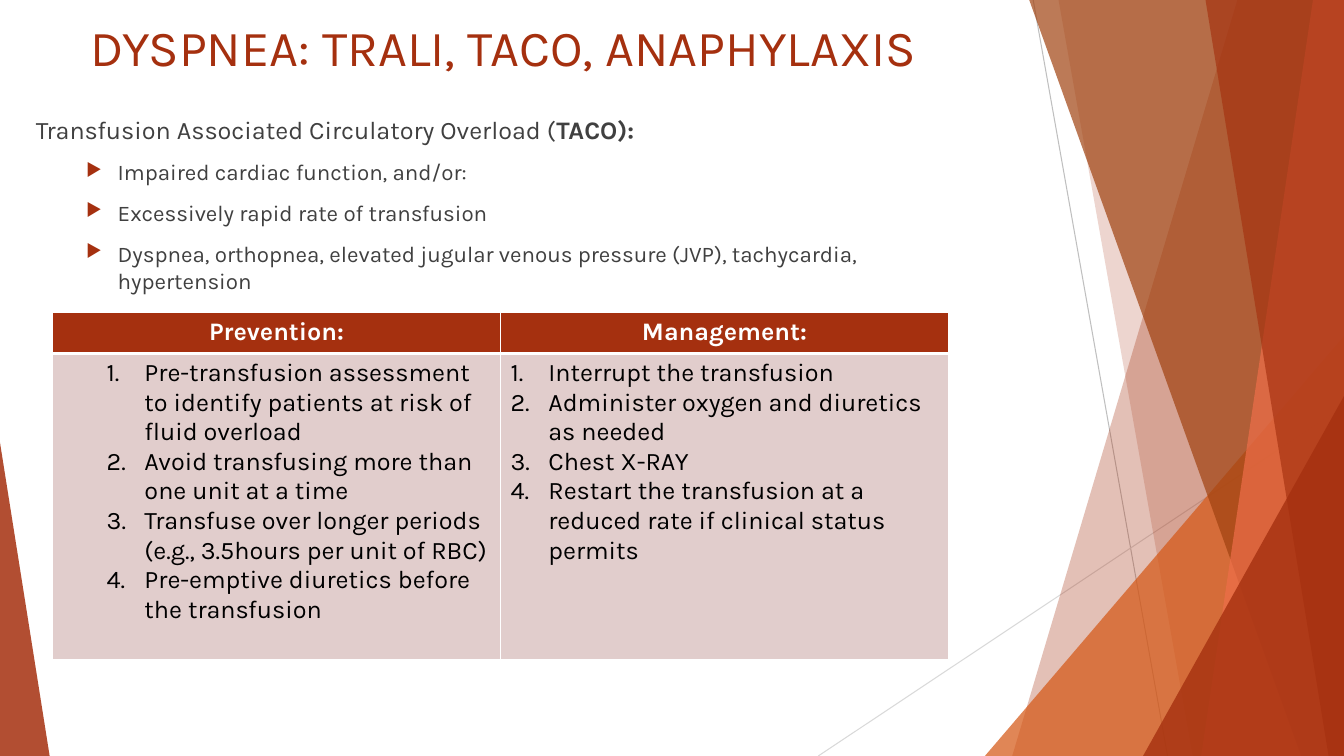
from lxml import etree
from pptx import Presentation
from pptx.dml.color import RGBColor
from pptx.enum.shapes import MSO_CONNECTOR, MSO_SHAPE
from pptx.enum.text import MSO_ANCHOR, PP_ALIGN
from pptx.oxml.ns import qn
from pptx.util import Pt

STRAIGHT = MSO_CONNECTOR.STRAIGHT
TRIANGLE = MSO_SHAPE.ISOSCELES_TRIANGLE
TOP, CENTER = MSO_ANCHOR.TOP, PP_ALIGN.CENTER

W, H = 960, 540
FONT = "Karla"
RUST, GREY, WHITE, BLACK, PINK = "A5300F", "404040", "FFFFFF", "000000", "E1CDCC"

EFFECTS = [
    "Impaired cardiac function, and/or:",
    "Excessively rapid rate of transfusion",
    "Dyspnea, orthopnea, elevated jugular venous pressure (JVP), tachycardia, hypertension",
]
# Header, left indent of the numbered text, steps
COLUMNS = [
    ("Prevention:", 58.5, [
        "Pre-transfusion assessment to identify patients at risk of fluid overload",
        "Avoid transfusing more than one unit at a time",
        "Transfuse over longer periods (e.g., 3.5hours per unit of RBC)",
        "Pre-emptive diuretics before the transfusion",
    ]),
    ("Management:", 27, [
        "Interrupt the transfusion",
        "Administer oxygen and diuretics as needed",
        "Chest X-RAY",
        "Restart the transfusion at a reduced rate if clinical status permits",
    ]),
]


def rgb(color):
    return RGBColor.from_string(color)


def child(parent, tag, **attrs):
    return etree.SubElement(parent, qn(tag), attrs)


def paint(shape, color, opacity):
    """Fill without outline or shadow; opacity in percent."""
    shape.shadow.inherit = False
    shape.line.fill.background()
    shape.fill.solid()
    shape.fill.fore_color.rgb = rgb(color)
    clr = shape.fill._xPr.find(qn("a:solidFill"))[0]
    child(clr, "a:alpha", val=str(opacity * 1000))


def add_line(s, x1, y1, x2, y2, color):
    line = s.shapes.add_connector(STRAIGHT, Pt(x1), Pt(y1), Pt(x2), Pt(y2))
    line.line.color.rgb = rgb(color)
    line.line.width = Pt(0.75)
    child(line._element.spPr, "a:effectLst")


def add_ribbon(s, top_x, bottom_x, color, opacity):
    """Band from a slanted left edge to the right side of the slide."""
    fb = s.shapes.build_freeform(Pt(top_x), Pt(-0.6))
    fb.add_line_segments([(Pt(W), Pt(-0.6)), (Pt(W), Pt(H)), (Pt(bottom_x), Pt(H))])
    paint(fb.convert_to_shape(), color, opacity)


def add_corner(s, x, y, width, apex, color, opacity):
    """Right triangle standing on the bottom edge."""
    tri = s.shapes.add_shape(TRIANGLE, Pt(x), Pt(y), Pt(width), Pt(H - y))
    tri.adjustments[0] = apex
    paint(tri, color, opacity)


def add_text_frame(s, x, y, w, h):
    tf = s.shapes.add_textbox(Pt(x), Pt(y), Pt(w), Pt(h)).text_frame
    tf.word_wrap = True
    tf.vertical_anchor = TOP
    return tf


def add_run(p, text, size, color, bold=False):
    r = p.add_run()
    r.text = text
    r.font.name, r.font.size, r.font.bold = FONT, Pt(size), bold
    r.font.color.rgb = rgb(color)


def indent(p, left, hanging):
    pPr = p._p.get_or_add_pPr()
    pPr.set("marL", str(Pt(left)))
    pPr.set("indent", str(-Pt(hanging)))
    return pPr


def add_arrow_bullet(p):
    pPr = indent(p, 58.5, 22.5)
    child(child(pPr, "a:buClr"), "a:srgbClr", val=RUST)
    child(pPr, "a:buSzPct", val="80000")
    child(pPr, "a:buChar", char="▶")


def style_cell(cell, fill, top, bottom):
    tcPr = cell._tc.get_or_add_tcPr()
    for side, width in (("L", 1), ("R", 1), ("T", top), ("B", bottom)):
        ln = child(tcPr, f"a:ln{side}", w=str(Pt(width)))
        child(child(ln, "a:solidFill"), "a:srgbClr", val=WHITE)
    cell.fill.solid()
    cell.fill.fore_color.rgb = rgb(fill)


def add_care_table(s, x, y, w, heights):
    shape = s.shapes.add_table(2, len(COLUMNS), Pt(x), Pt(y), Pt(w), Pt(sum(heights)))
    table = shape.table
    table.horz_banding = False
    for row, height in zip(table.rows, heights):
        row.height = Pt(height)
    for i, (header, left, steps) in enumerate(COLUMNS):
        table.columns[i].width = Pt(w / len(COLUMNS))
        head, body = table.cell(0, i), table.cell(1, i)
        style_cell(head, RUST, 1, 3)
        style_cell(body, PINK, 3, 1)
        p = head.text_frame.paragraphs[0]
        p.alignment = CENTER
        add_run(p, header, 18, WHITE, True)
        tf = body.text_frame
        for j, step in enumerate(steps):
            p = tf.add_paragraph() if j else tf.paragraphs[0]
            child(indent(p, left, 27), "a:buAutoNum", type="arabicPeriod")
            add_run(p, step, 18, BLACK)


def add_decoration(s):
    add_line(s, 738, 0, 834, H, "BFBFBF")
    add_line(s, W, 290, 584.5, H, "D9D9D9")
    add_ribbon(s, 884, 723, RUST, 30)
    add_ribbon(s, 756, 852, RUST, 20)
    add_corner(s, 703.5, 240, 256.5, 1, "D55816", 72)
    add_ribbon(s, 735, 929.5, "A04210", 70)
    add_ribbon(s, 938, 858, "EE6E4A", 70)
    add_ribbon(s, 861, 949, RUST, 65)
    add_corner(s, 816.5, 283, 143.5, 1, RUST, 80)
    add_corner(s, 0, 316, 35.5, 0, RUST, 85)


def main():
    prs = Presentation()
    prs.slide_width, prs.slide_height = Pt(W), Pt(H)
    s = prs.slides.add_slide(prs.slide_layouts[6])

    # Background ribbons
    add_decoration(s)

    # Title
    tf = add_text_frame(s, 57.5, 8, 677, 104)
    add_run(tf.paragraphs[0], "DYSPNEA: TRALI, TACO, ANAPHYLAXIS", 36, RUST)

    # Definition and signs
    tf = add_text_frame(s, 18.5, 78, 677, 305)
    p = tf.paragraphs[0]
    add_run(p, "Transfusion Associated Circulatory Overload (", 18, GREY)
    add_run(p, "TACO):", 18, GREY, True)
    for effect in EFFECTS:
        p = tf.add_paragraph()
        p.space_before = Pt(10)
        add_arrow_bullet(p)
        add_run(p, effect, 16, GREY)

    # Prevention and management
    add_care_table(s, 37.5, 223, 640, (29.5, 218.5))

    prs.save("out.pptx")


if __name__ == "__main__":
    main()
